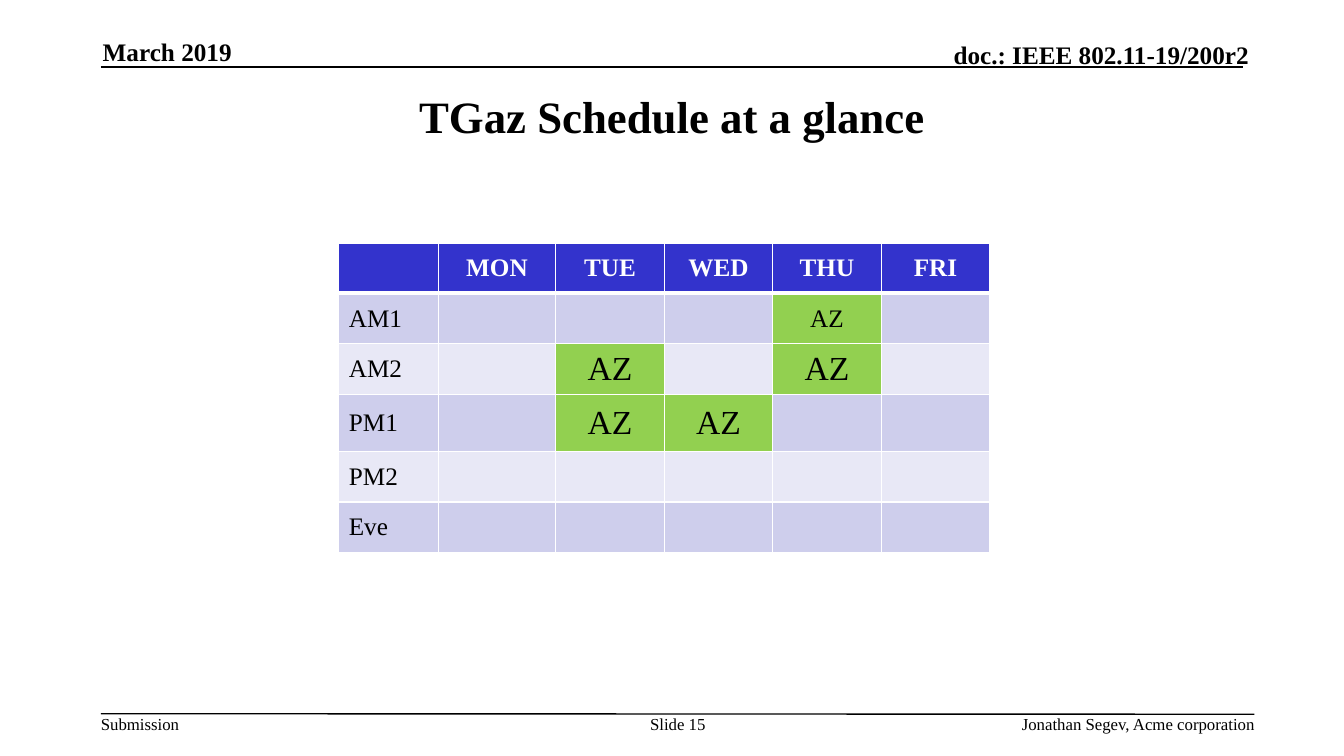
from lxml import etree
from pptx import Presentation
from pptx.dml.color import RGBColor
from pptx.enum.shapes import MSO_CONNECTOR
from pptx.enum.text import MSO_ANCHOR, PP_ALIGN
from pptx.oxml.ns import qn
from pptx.util import Pt

LEFT, CENTER, RIGHT = PP_ALIGN.LEFT, PP_ALIGN.CENTER, PP_ALIGN.RIGHT
TOP, MIDDLE, BOTTOM = MSO_ANCHOR.TOP, MSO_ANCHOR.MIDDLE, MSO_ANCHOR.BOTTOM
STRAIGHT = MSO_CONNECTOR.STRAIGHT

TITLE = "TGaz Schedule at a glance"
DAYS = ["MON", "TUE", "WED", "THU", "FRI"]
SLOTS = ["AM1", "AM2", "PM1", "PM2", "Eve"]
MEETING = "AZ"
MEETINGS = {
    ("AM1", "THU"): "body",
    ("AM2", "TUE"): "meeting",
    ("AM2", "THU"): "meeting",
    ("PM1", "TUE"): "meeting",
    ("PM1", "WED"): "meeting",
}
THEME = {
    "font": "Times New Roman",
    "size": {"title": 32, "meeting": 24, "body": 18, "footer": 12},
    "text": "000000",
    "light": "FFFFFF",
    "header": "3333CC",
    "booked": "92D050",
    "bands": ["CECEEC", "E8E8F6"],
}
TITLE_BOX = (72, 54, 816, 57.6)
LABELS = [
    ("March 2019", (73.4, 25.9, 196.6, 21.6), "body", LEFT, BOTTOM, True),
    ("doc.: IEEE 802.11-19/200r2", (524.9, 28.1, 367.2, 21.6), "body", RIGHT, BOTTOM, True),
    ("Submission", (72, 509.8, 56.9, 14.4), "footer", LEFT, TOP, False),
    ("Slide 15", (456.5, 509.8, 55.4, 28.8), "footer", CENTER, TOP, False),
    ("Jonathan Segev, Acme corporation", (562.3, 509.8, 334.1, 14.4), "footer", RIGHT, TOP, False),
]
RULES = [(72, 48, 888, 48), (72, 509.8, 896, 510.2)]
TABLE_AT = (242, 173.5)
COL_WIDTHS = [71, 84] + [77.5] * 4
ROW_HEIGHTS = [36, 36, 36, 41, 36, 36]


def points(values):
    return [Pt(v) for v in values]


def assign(obj, values):
    for name, value in values.items():
        setattr(obj, name, value)


def write(tf, text, size, align, bold=False, color=THEME["text"]):
    p = tf.paragraphs[0]
    p.alignment = align
    r = p.add_run()
    r.text = text
    assign(r.font, {"name": THEME["font"], "size": Pt(THEME["size"][size]), "bold": bold})
    r.font.color.rgb = RGBColor.from_string(color)


def add_title(s):
    sp = s.shapes.title
    assign(sp, dict(zip(("left", "top", "width", "height"), points(TITLE_BOX))))
    sp.text_frame.vertical_anchor = MIDDLE
    write(sp.text_frame, TITLE, "title", CENTER, True)


def add_label(s, text, box, size, align, anchor, bold):
    tf = s.shapes.add_textbox(*points(box)).text_frame
    margins = dict.fromkeys(("margin_left", "margin_top", "margin_right", "margin_bottom"), 0)
    assign(tf, {"word_wrap": True, "vertical_anchor": anchor, **margins})
    write(tf, text, size, align, bold)


def add_rule(s, ends):
    line = s.shapes.add_connector(STRAIGHT, *points(ends))
    line.line.width = Pt(1)
    line.line.color.rgb = RGBColor.from_string(THEME["text"])
    etree.SubElement(line._element.spPr, qn("a:effectLst"))


def add_borders(cell, widths):
    tc_pr = cell._tc.get_or_add_tcPr()
    for i, (side, width) in enumerate(widths.items()):
        ln = etree.Element(qn(f"a:ln{side}"), w=str(Pt(width)))
        fill = etree.SubElement(ln, qn("a:solidFill"))
        etree.SubElement(fill, qn("a:srgbClr"), val=THEME["light"])
        tc_pr.insert(i, ln)


def cell_content(row, col):
    """Return fill and text settings for one cell of the schedule."""
    if row == 0:
        text = DAYS[col - 1] if col else ""
        return THEME["header"], (text, "body", CENTER, True, THEME["light"])
    slot, band = SLOTS[row - 1], THEME["bands"][(row - 1) % 2]
    if col == 0:
        return band, (slot, "body", LEFT)
    size = MEETINGS.get((slot, DAYS[col - 1]))
    if size:
        return THEME["booked"], (MEETING, size, CENTER)
    return band, ("", "body", CENTER)


def add_schedule(s):
    size = (sum(COL_WIDTHS), sum(ROW_HEIGHTS))
    frame = s.shapes.add_table(len(ROW_HEIGHTS), len(COL_WIDTHS), *points(TABLE_AT + size))
    table = frame.table
    for column, width in zip(table.columns, COL_WIDTHS):
        column.width = Pt(width)
    for i, height in enumerate(ROW_HEIGHTS):
        table.rows[i].height = Pt(height)
        for j in range(len(COL_WIDTHS)):
            cell = table.cell(i, j)
            color, content = cell_content(i, j)
            cell.fill.solid()
            cell.fill.fore_color.rgb = RGBColor.from_string(color)
            cell.vertical_anchor = MIDDLE
            if content[0]:
                write(cell.text_frame, *content)
            add_borders(cell, {"L": 1, "R": 1, "T": 3 if i == 1 else 1, "B": 3 if i == 0 else 1})


def main():
    prs = Presentation()
    assign(prs, {"slide_width": Pt(960), "slide_height": Pt(540)})
    s = prs.slides.add_slide(prs.slide_layouts[5])
    for ends in RULES:
        add_rule(s, ends)
    add_title(s)
    for label in LABELS:
        add_label(s, *label)
    add_schedule(s)
    prs.save("out.pptx")


if __name__ == "__main__":
    main()
